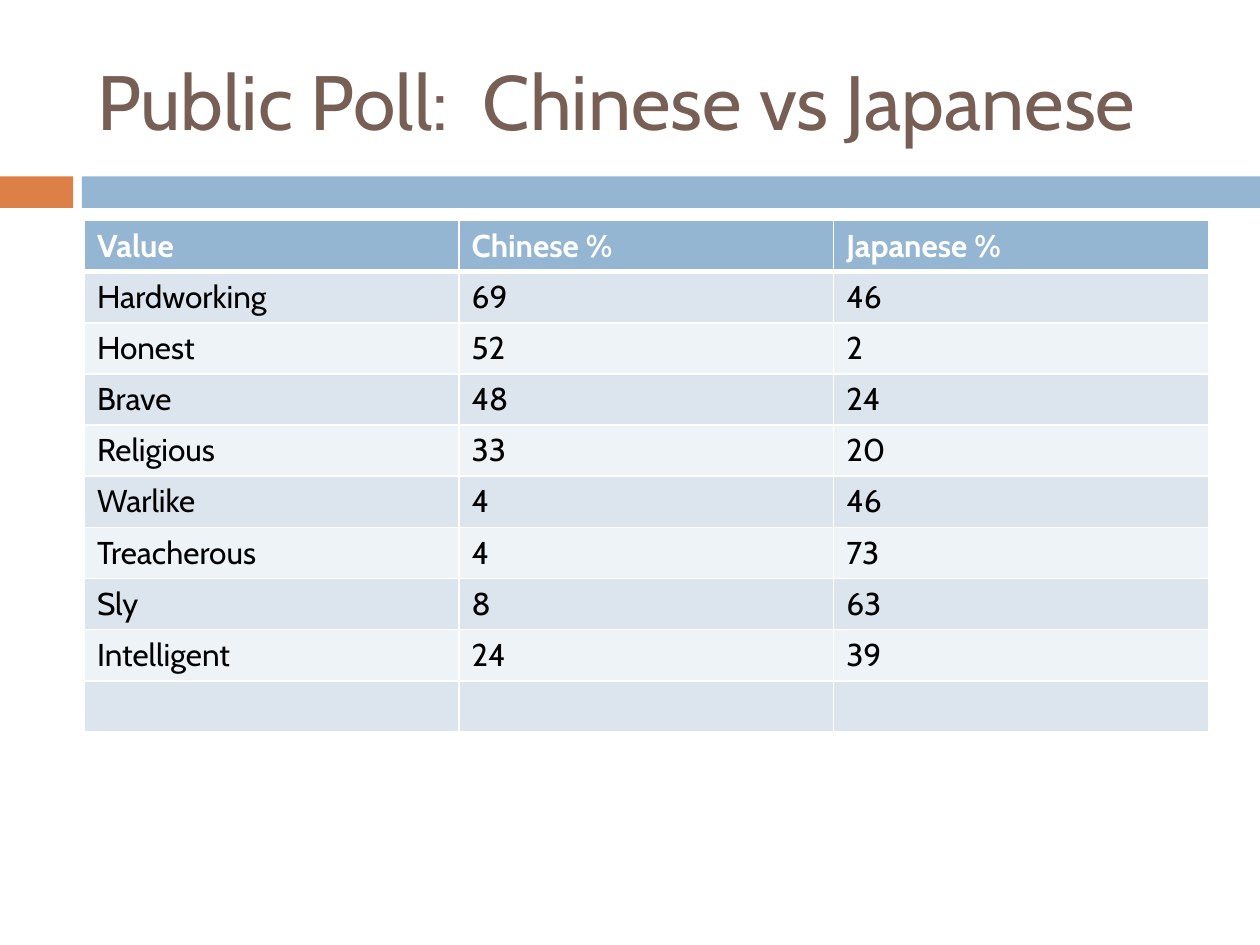
from dataclasses import dataclass

from lxml import etree
from pptx import Presentation
from pptx import util as u
from pptx.dml.color import RGBColor
from pptx.enum import shapes, text
from pptx.oxml import ns

PX = u.Inches(1) // 100

ROWS = [
    ("Value", "Chinese %", "Japanese %"),
    ("Hardworking", "69", "46"),
    ("Honest", "52", "2"),
    ("Brave", "48", "24"),
    ("Religious", "33", "20"),
    ("Warlike", "4", "46"),
    ("Treacherous", "4", "73"),
    ("Sly", "8", "63"),
    ("Intelligent", "24", "39"),
    ("", "", ""),
]


@dataclass(frozen=True)
class Theme:
    """Hold the colours, font and type sizes of the slide."""
    font: str = "Cabin"
    title: str = "775F55"
    accent: str = "DD8047"
    band: str = "94B6D2"
    stripes: tuple = ("EEF3F7", "DCE5EE")
    light: str = "FFFFFF"
    dark: str = "000000"
    title_pt: int = 44
    cell_pt: int = 18
    rule_pt: int = 1
    header_rule_pt: int = 3


THEME = Theme()


def style_text(tf, size, color, bold=False):
    """Format every run of a text frame."""
    for p in tf.paragraphs:
        for r in p.runs:
            r.font.name = THEME.font
            r.font.size = u.Pt(size)
            r.font.bold = bold
            r.font.color.rgb = RGBColor.from_string(color)


def fill_solid(target, color):
    """Give a shape or cell a plain fill."""
    target.fill.solid()
    target.fill.fore_color.rgb = RGBColor.from_string(color)


def add_title(slide, box, title):
    """Place the title placeholder in its box."""
    sp = slide.shapes.title
    sp.left, sp.top, sp.width, sp.height = (v * PX for v in box)
    tf = sp.text_frame
    tf.text = title
    tf.word_wrap = True
    tf.auto_size = text.MSO_AUTO_SIZE.NONE
    tf.vertical_anchor = text.MSO_ANCHOR.MIDDLE
    tf.paragraphs[0].alignment = text.PP_ALIGN.LEFT
    style_text(tf, THEME.title_pt, THEME.title)


def add_band(slide, box, accent_width=58, gap=7):
    """Split the box into a short accent bar and a long band."""
    x, y, w, h = box
    start = accent_width + gap
    bars = [(x, accent_width, THEME.accent), (x + start, w - start, THEME.band)]
    for left, width, color in bars:
        sp = slide.shapes.add_shape(
            shapes.MSO_SHAPE.RECTANGLE, left * PX, y * PX, width * PX, h * PX)
        sp.shadow.inherit = False
        sp.line.fill.background()
        fill_solid(sp, color)


def set_borders(cell, bottom_pt):
    """Draw light rules on the four sides of a cell."""
    tc_pr = cell._tc.get_or_add_tcPr()
    for side in "LRTB":
        width = bottom_pt if side == "B" else THEME.rule_pt
        ln = etree.SubElement(tc_pr, ns.qn(f"a:ln{side}"), w=str(u.Pt(width)))
        fill = etree.SubElement(ln, ns.qn("a:solidFill"))
        etree.SubElement(fill, ns.qn("a:srgbClr"), val=THEME.light)


def add_poll_table(slide, box, rows):
    """Fill the box with a striped table under a header row."""
    x, y, w, h = (v * PX for v in box)
    table = slide.shapes.add_table(len(rows), len(rows[0]), x, y, w, h).table
    for i, values in enumerate(rows):
        header = i == 0
        fill = THEME.band if header else THEME.stripes[i % 2]
        color = THEME.light if header else THEME.dark
        rule = THEME.header_rule_pt if i < 1 else THEME.rule_pt
        for j, value in enumerate(values):
            cell = table.cell(i, j)
            cell.text_frame.text = value
            style_text(cell.text_frame, THEME.cell_pt, color, header)
            set_borders(cell, rule)
            if i == 1:
                top = cell._tc.tcPr.find(ns.qn("a:lnT"))
                top.set("w", str(u.Pt(THEME.header_rule_pt)))
            fill_solid(cell, fill)


def main():
    """Build and save the slide."""
    prs = Presentation()
    prs.slide_width, prs.slide_height = 1000 * PX, 750 * PX
    slide = prs.slides.add_slide(prs.slide_layouts[5])
    add_band(slide, (0, 140, 1000, 25))
    add_title(slide, (67, 25, 892, 108), "Public Poll:  Chinese vs Japanese")
    add_poll_table(slide, (67, 175, 892, 406), ROWS)
    prs.save("out.pptx")


if __name__ == "__main__":
    main()
